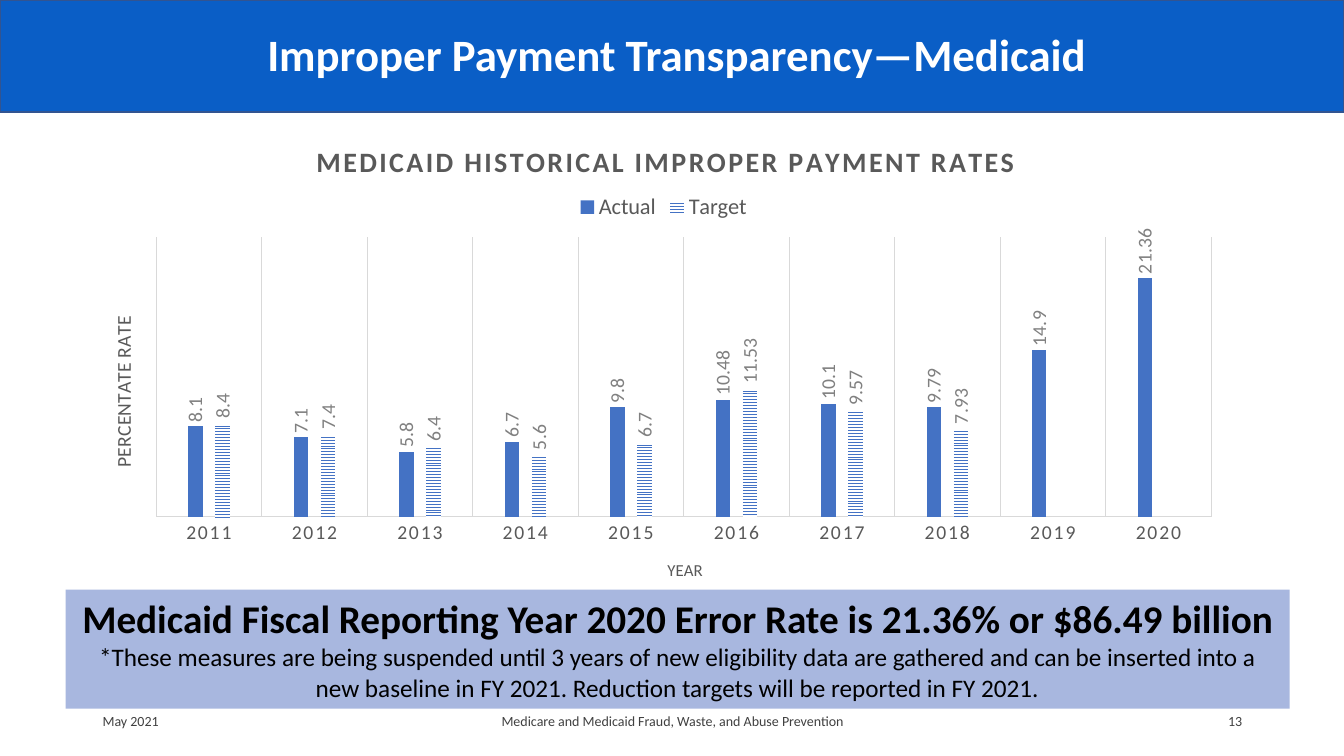
"""Build the Medicaid improper payment transparency slide."""
import lxml.etree
import pptx
import pptx.chart.data
import pptx.dml.color
import pptx.enum.chart
import pptx.enum.dml
import pptx.enum.shapes
import pptx.enum.text
import pptx.oxml.ns
import pptx.util

RGBColor = pptx.dml.color.RGBColor
HEADER_BLUE = RGBColor(0x0A, 0x5E, 0xC6)
HEADER_EDGE = RGBColor(0x32, 0x54, 0x91)
BOX_BLUE = RGBColor(0xA8, 0xB7, 0xDF)
BAR_BLUE = RGBColor(0x44, 0x72, 0xC4)
GRID_GREY = RGBColor(0xD9, 0xD9, 0xD9)
LABEL_GREY = RGBColor(0x80, 0x80, 0x80)
CHART_GREY = RGBColor(0x59, 0x59, 0x59)
FOOTER_GREY = RGBColor(0x40, 0x40, 0x40)
WHITE = RGBColor(0xFF, 0xFF, 0xFF)
BLACK = RGBColor(0, 0, 0)
FONT = "Calibri"
UPRIGHT = "-5400000"
ALIGN = pptx.enum.text.PP_ALIGN
MIDDLE = pptx.enum.text.MSO_ANCHOR.MIDDLE
RECTANGLE = pptx.enum.shapes.MSO_SHAPE.RECTANGLE

presentation = pptx.Presentation()
presentation.slide_width = pptx.util.Inches(13.33)
presentation.slide_height = pptx.util.Inches(7.5)
slide = presentation.slides.add_slide(presentation.slide_layouts[6])
column = presentation.slide_width / 100
row = presentation.slide_height / 100


def write(frame, text, size, color, bold=False, align=ALIGN.CENTER, line_spacing=None, tracking=0):
    """Add one formatted paragraph to a text frame."""
    paragraph = frame.add_paragraph() if frame.text else frame.paragraphs[0]
    paragraph.alignment = align
    if line_spacing:
        paragraph.line_spacing = line_spacing
    run = paragraph.add_run()
    run.text = text
    run.font.name = FONT
    run.font.size = pptx.util.Pt(size)
    run.font.bold = bold
    run.font.color.rgb = color
    if tracking:
        run.font._element.set("spc", str(tracking))


def set_layout(parent, index, **shares):
    """Place a chart part by shares of the chart's size."""
    for old_layout in parent.findall(pptx.oxml.ns.qn("c:layout")):
        parent.remove(old_layout)
    layout = lxml.etree.Element(pptx.oxml.ns.qn("c:layout"))
    manual = lxml.etree.SubElement(layout, pptx.oxml.ns.qn("c:manualLayout"))
    settings = {"xMode": "edge", "yMode": "edge", **shares}
    if "w" in shares:
        settings = {"layoutTarget": "inner", **settings}
    for name, value in settings.items():
        lxml.etree.SubElement(manual, pptx.oxml.ns.qn(f"c:{name}")).set("val", str(value))
    parent.insert(index, layout)


header = slide.shapes.add_shape(RECTANGLE, 0, 0, presentation.slide_width, int(14.8 * row))
header.shadow.inherit = False
header.fill.solid()
header.fill.fore_color.rgb = HEADER_BLUE
header.line.color.rgb = HEADER_EDGE
header.line.width = pptx.util.Pt(1)

chart_data = pptx.chart.data.CategoryChartData()
chart_data.categories = [str(year) for year in range(2011, 2021)]
chart_data.add_series("Actual", [8.1, 7.1, 5.8, 6.7, 9.8, 10.48, 10.1, 9.79, 14.9, 21.36])
chart_data.add_series("Target", [8.4, 7.4, 6.4, 5.6, 6.7, 11.53, 9.57, 7.93, None, None])
chart = slide.shapes.add_chart(
    pptx.enum.chart.XL_CHART_TYPE.COLUMN_CLUSTERED,
    int(7.05 * column), int(14.93 * row), int(84.77 * column), int(62.93 * row), chart_data).chart
chart.font.name = FONT
chart.font.size = pptx.util.Pt(10)

year_axis, rate_axis = chart.category_axis, chart.value_axis
rate_axis.minimum_scale, rate_axis.maximum_scale = 0, 25
rate_axis.has_major_gridlines = False
rate_axis.visible = False
year_axis.major_tick_mark = pptx.enum.chart.XL_TICK_MARK.NONE
year_axis.has_major_gridlines = True
for line in (year_axis.format.line, year_axis.major_gridlines.format.line):
    line.color.rgb = GRID_GREY
    line.width = pptx.util.Pt(0.75)

chart.has_legend = True
chart.legend.position = pptx.enum.chart.XL_LEGEND_POSITION.TOP
chart.legend.include_in_layout = False
for font, size in ((year_axis.tick_labels.font, 14), (chart.legend.font, 16)):
    font.name = FONT
    font.size = pptx.util.Pt(size)
    font.color.rgb = CHART_GREY
year_axis.tick_labels.font._element.set("spc", "120")

for owner, text, size, bold, tracking, left, top in (
        (chart, "MEDICAID HISTORICAL IMPROPER PAYMENT RATES", 20, True, 160, 0.19, 0.05),
        (year_axis, "YEAR", 12, False, 0, 0.5, 0.93),
        (rate_axis, "PERCENTATE RATE", 14, False, 0, 0.01, 0.42)):
    owner.has_title = True
    title = owner.chart_title if owner is chart else owner.axis_title
    write(title.text_frame, text, size, CHART_GREY, bold=bold, tracking=tracking)
    set_layout(title._element, 1, x=left, y=top)
rate_axis.axis_title.text_frame._txBody.bodyPr.set("rot", UPRIGHT)
rate_axis.axis_title.text_frame._txBody.bodyPr.set("vert", "horz")
set_layout(chart.legend._element, 1, x=0.42, y=0.16)
set_layout(chart._chartSpace.chart.plotArea, 0, x=0.054, y=0.262, w=0.926, h=0.587)

plot = chart.plots[0]
plot.gap_width = 444
plot.overlap = -90
plot.vary_by_categories = False
actual, target = plot.series
actual.format.fill.solid()
actual.format.fill.fore_color.rgb = BAR_BLUE
target.format.fill.patterned()
target.format.fill.pattern = pptx.enum.dml.MSO_PATTERN.ZIG_ZAG
target.format.fill.fore_color.rgb = BAR_BLUE
target.format.fill.back_color.rgb = WHITE
for series in plot.series:
    labels = series.data_labels
    labels.show_value = True
    labels.position = pptx.enum.chart.XL_LABEL_POSITION.OUTSIDE_END
    labels.font.name = FONT
    labels.font.size = pptx.util.Pt(14)
    labels.font.color.rgb = LABEL_GREY
    body = labels._element.find(".//" + pptx.oxml.ns.qn("a:bodyPr"))
    body.set("rot", UPRIGHT)
    body.set("vert", "horz")

box = slide.shapes.add_shape(
    RECTANGLE, int(4.88 * column), int(78 * row), int(91.07 * column), int(15.73 * row))
box.shadow.inherit = False
box.fill.solid()
box.fill.fore_color.rgb = BOX_BLUE
box.line.fill.background()
box.text_frame.word_wrap = True
box.text_frame.vertical_anchor = pptx.enum.text.MSO_ANCHOR.TOP
write(box.text_frame, "Medicaid Fiscal Reporting Year 2020 Error Rate is 21.36% or $86.49 billion",
      28, BLACK, bold=True)
write(box.text_frame, "*These measures are being suspended until 3 years of new eligibility data are "
      "gathered and can be inserted into a new baseline in FY 2021. "
      "Reduction targets will be reported in FY 2021.", 18, BLACK)

heading = {"size": 32, "color": WHITE, "bold": True, "line_spacing": 0.9}
footer = {"size": 10, "color": FOOTER_GREY}
for text, left, top, width, height, style in (
        ("Improper Payment Transparency—Medicaid", 2.85, 0.13, 95.05, 14.93, heading),
        ("May 2021", 6.9, 92.67, 22.5, 5.33, {**footer, "align": ALIGN.LEFT}),
        ("Medicare and Medicaid Fraud, Waste, and Abuse Prevention", 33.16, 92.67, 33.76, 5.33, footer),
        ("13", 70.67, 92.67, 22.5, 5.33, {**footer, "align": ALIGN.RIGHT})):
    frame = slide.shapes.add_textbox(
        int(left * column), int(top * row), int(width * column), int(height * row)).text_frame
    frame.word_wrap = True
    frame.vertical_anchor = MIDDLE
    write(frame, text, **style)

presentation.save("out.pptx")
